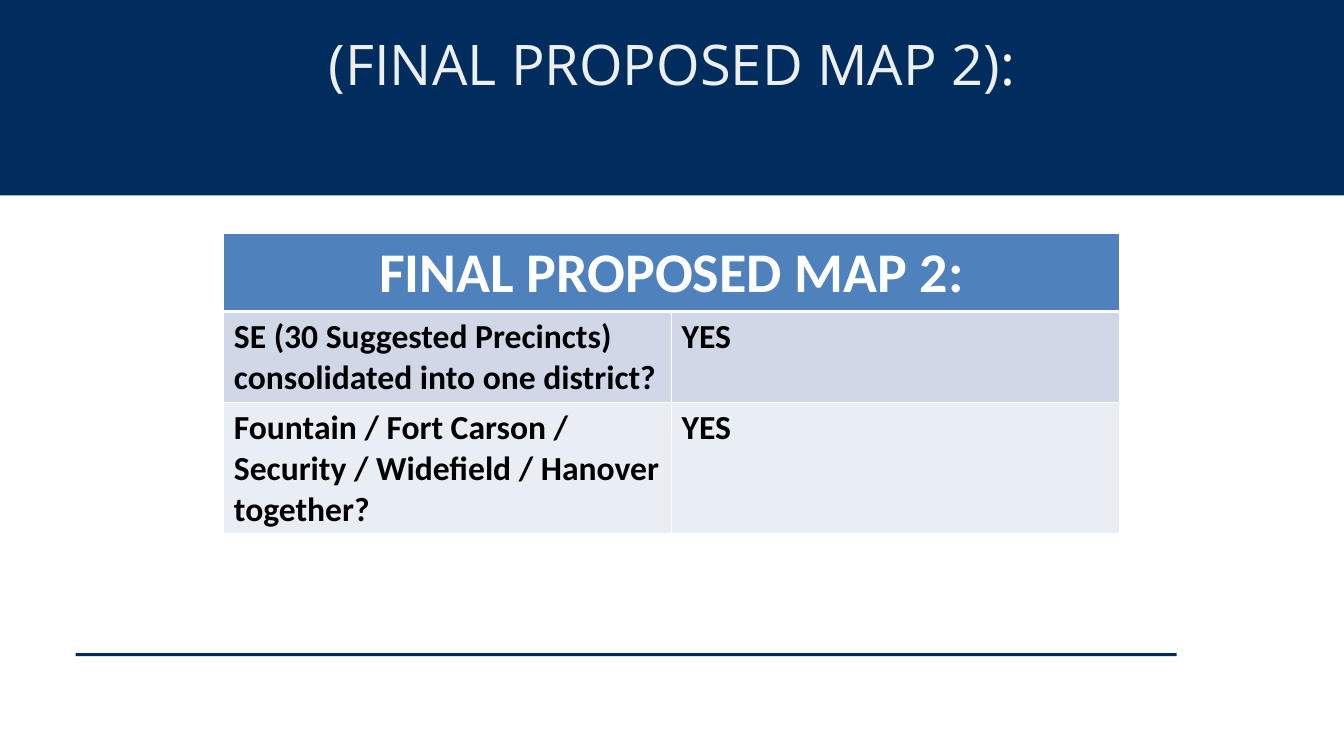
from dataclasses import dataclass

from lxml.etree import SubElement
from pptx import Presentation
from pptx.dml.color import RGBColor
from pptx.enum.shapes import MSO_SHAPE
from pptx.enum.text import MSO_ANCHOR, MSO_AUTO_SIZE, PP_ALIGN
from pptx.oxml.ns import qn
from pptx.slide import Slide
from pptx.table import _Cell as Cell
from pptx.util import Inches, Pt

NAVY = RGBColor(0x00, 0x2D, 0x5D)
PALE = RGBColor(0xEC, 0xEF, 0xEB)
WHITE = RGBColor(0xFF, 0xFF, 0xFF)
BLACK = RGBColor(0x00, 0x00, 0x00)
HEADER_BLUE = RGBColor(0x4F, 0x81, 0xBD)
BAND_DARK = RGBColor(0xD0, 0xD8, 0xE8)
BAND_LIGHT = RGBColor(0xE9, 0xED, 0xF4)


@dataclass(frozen=True)
class Bar:
    left: float
    top: float
    width: float
    height: float


@dataclass(frozen=True)
class Row:
    texts: tuple[str, str]
    height: float
    fill: RGBColor
    color: RGBColor = BLACK
    size: int = 24
    align: PP_ALIGN = PP_ALIGN.LEFT
    bottom_border: int = 1


HEADER_BAND = Bar(0, 0, 13.33, 1.94)
FOOTER_RULE = Bar(0.75, 6.48, 10.92, 0.03)

ROWS = [
    Row(("FINAL PROPOSED MAP 2:", ""), 0.77, HEADER_BLUE, WHITE, 40,
        PP_ALIGN.CENTER, 3),
    Row(("SE (30 Suggested Precincts) consolidated into one district?", "YES"),
        0.9, BAND_DARK),
    Row(("Fountain / Fort Carson / Security / Widefield / Hanover together?",
         "YES"), 1.3, BAND_LIGHT),
]


def add_bars(slide: Slide) -> None:
    """Draw the navy bars behind the title."""
    for bar in (HEADER_BAND, FOOTER_RULE):
        shape = slide.shapes.add_shape(
            MSO_SHAPE.RECTANGLE, Inches(bar.left), Inches(bar.top),
            Inches(bar.width), Inches(bar.height))
        shape.shadow.inherit = False
        shape.fill.solid()
        shape.fill.fore_color.rgb = NAVY
        shape.line.fill.background()
        slide.shapes.title.element.addprevious(shape.element)


def fill_title(slide: Slide) -> None:
    title = slide.shapes.title
    title.left, title.top = Inches(0.32), Inches(0.14)
    title.width, title.height = Inches(12.69), Inches(0.77)
    frame = title.text_frame
    frame.margin_left = frame.margin_right = 0
    frame.margin_top = frame.margin_bottom = 0
    frame.word_wrap = True
    frame.auto_size = MSO_AUTO_SIZE.SHAPE_TO_FIT_TEXT
    frame.vertical_anchor = MSO_ANCHOR.TOP
    heading = frame.paragraphs[0]
    heading.alignment = PP_ALIGN.CENTER
    heading.line_spacing = Pt(58.7)
    for text, color in (("(FINAL PROPOSED MAP 2)", PALE), (":", WHITE)):
        run = heading.add_run()
        run.text = text
        run.font.name = "Open Sans"
        run.font.size = Pt(40)
        run.font.color.rgb = color


def set_borders(cell: Cell, top: int, bottom: int) -> None:
    """Give the cell white borders, with top and bottom widths in points."""
    properties = cell._tc.get_or_add_tcPr()
    for side, width in (("L", 1), ("R", 1), ("T", top), ("B", bottom)):
        line = SubElement(properties, qn(f"a:ln{side}"), w=str(Pt(width)))
        solid = SubElement(line, qn("a:solidFill"))
        SubElement(solid, qn("a:srgbClr"), val=str(WHITE))


def fill_cell(cell: Cell, text: str, row: Row, top_border: int) -> None:
    set_borders(cell, top_border, row.bottom_border)
    cell.fill.solid()
    cell.fill.fore_color.rgb = row.fill
    if not text:
        return
    paragraph = cell.text_frame.paragraphs[0]
    paragraph.text = text
    paragraph.alignment = row.align
    font = paragraph.runs[0].font
    font.name = "Calibri"
    font.size = Pt(row.size)
    font.bold = True
    font.color.rgb = row.color


def add_answers(slide: Slide) -> None:
    table = slide.shapes.add_table(
        len(ROWS), 2, Inches(2.22), Inches(2.32), Inches(8.88),
        Inches(sum(row.height for row in ROWS))).table
    table.horz_banding = False
    table.first_row = False
    table.cell(0, 0).merge(table.cell(0, 1))
    top_border = 1
    for index, row in enumerate(ROWS):
        table.rows[index].height = Inches(row.height)
        for column, text in enumerate(row.texts):
            fill_cell(table.cell(index, column), text, row, top_border)
        top_border = row.bottom_border


def main() -> None:
    deck = Presentation()
    deck.slide_width, deck.slide_height = Inches(13.33), Inches(7.5)
    slide = deck.slides.add_slide(deck.slide_layouts.get_by_name("Title Only"))
    add_bars(slide)
    fill_title(slide)
    add_answers(slide)
    deck.save("out.pptx")


if __name__ == "__main__":
    main()
